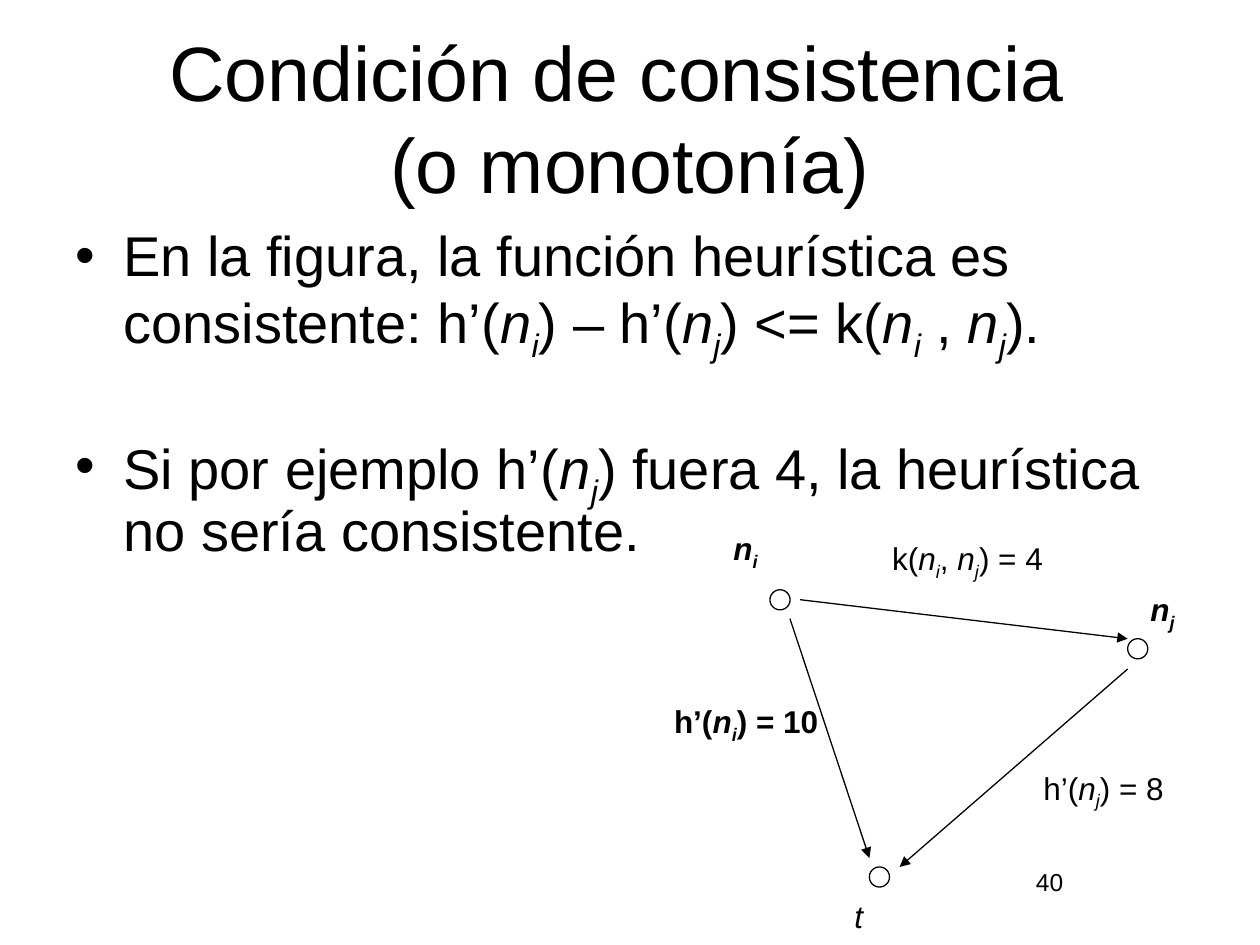
from pptx import Presentation
from pptx.dml.color import RGBColor
from pptx.enum.shapes import MSO_CONNECTOR, MSO_SHAPE
from pptx.enum.text import MSO_ANCHOR, MSO_AUTO_SIZE, PP_ALIGN
from pptx.oxml.ns import qn
from pptx.util import Pt
from lxml.etree import SubElement

BLACK = RGBColor(0, 0, 0)
WHITE = RGBColor(255, 255, 255)
NODE_SIZE = 11.5

NODES = [(58, 35), (262.4, 63), (114.8, 193.4)]
ARROWS = [
    (69.4, 51.5, 114.8, 188.3),
    (262.4, 80.3, 132.1, 193.4),
    (75.2, 40.7, 262.4, 63),
]
LABELS = [
    ("|ni|", 34.2, 0.4, 20.9, 21.6, True),
    ("|nj|", 272.5, 35, 20.9, 21.6, True),
    ("|t|", 103.3, 210.6, 11.5, 21.6, False),
    ("k(|ni|, |nj|) = 4", 124.9, 6.2, 95, 31.7, False),
    ("h’(|ni|) = 10", 0.3, 99, 89.3, 21.6, True),
    ("h’(|nj|) = 8", 211.3, 137.2, 75.6, 21.6, False),
]
BULLETS = [
    ("En la figura, la función heurística es consistente: "
     "h’(|ni|) – h’(|nj|) <= k(|ni| , |nj|).", 4.8),
    ("Si por ejemplo h’(|nj|) fuera 4, la heurística no sería consistente.", 44),
]


def place(sp, x, y, w, h):
    sp.left, sp.top, sp.width, sp.height = Pt(x), Pt(y), Pt(w), Pt(h)


def setup_frame(sp, insets, anchor=MSO_ANCHOR.TOP):
    tf = sp.text_frame
    tf.word_wrap = True
    tf.auto_size = MSO_AUTO_SIZE.NONE
    tf.vertical_anchor = anchor
    tf.margin_left, tf.margin_top, tf.margin_right, tf.margin_bottom = map(Pt, insets)
    return tf


def write(p, text, size, bold=False, align=PP_ALIGN.LEFT, margin=0, indent=0,
          before=0, spacing=1.0):
    p.alignment = align
    p.space_before = Pt(before)
    p.line_spacing = spacing
    pPr = p._p.get_or_add_pPr()
    pPr.set("marL", str(Pt(margin)))
    pPr.set("indent", str(Pt(indent)))

    def add_run(part, italic=False, sub=False):
        r = p.add_run()
        r.text = part
        r.font.name, r.font.size = "Arial", Pt(size)
        r.font.bold, r.font.italic = bold, italic
        r.font.color.rgb = BLACK
        if sub:
            r.font._element.set("baseline", "-25000")

    for i, part in enumerate(text.split("|")):
        if i % 2:
            add_run(part[0], italic=True)
            if part[1:]:
                add_run(part[1:], italic=True, sub=True)
        elif part:
            for j, line in enumerate(part.split("\n")):
                if j:
                    p.add_line_break()
                add_run(line)


def add_title(s, x, y, w, h):
    sp = s.shapes.title
    place(sp, x, y, w, h)
    tf = setup_frame(sp, (4.3, 4.3, 7.2, 4.3), MSO_ANCHOR.MIDDLE)
    write(tf.paragraphs[0], "Condición de consistencia \n(o monotonía)", 44,
          align=PP_ALIGN.CENTER, margin=2.9, indent=-2.9)


def add_body(s, x, y, w, h):
    sp = s.placeholders[1]
    place(sp, x, y, w, h)
    tf = setup_frame(sp, (4.3, 4.3, 7.2, 4.3))
    for i, (text, before) in enumerate(BULLETS):
        p = tf.add_paragraph() if i else tf.paragraphs[0]
        write(p, text, 32, margin=30.2, indent=-27.4, before=before, spacing=0.9)


def add_label(shapes, text, x, y, w, h, insets=(0, 0, 2.9, 0), **fmt):
    sp = shapes.add_textbox(Pt(x), Pt(y), Pt(w), Pt(h))
    write(setup_frame(sp, insets).paragraphs[0], text, **fmt)


def add_node(shapes, x, y):
    sp = shapes.add_shape(MSO_SHAPE.OVAL, Pt(x), Pt(y), Pt(NODE_SIZE), Pt(NODE_SIZE))
    sp.shadow.inherit = False
    sp.fill.solid()
    sp.fill.fore_color.rgb = WHITE
    sp.line.color.rgb = BLACK
    sp.line.width = Pt(0.75)


def add_arrow(shapes, x1, y1, x2, y2):
    cxn = shapes.add_connector(MSO_CONNECTOR.STRAIGHT, Pt(x1), Pt(y1), Pt(x2), Pt(y2))
    cxn.line.color.rgb = BLACK
    cxn.line.width = Pt(0.75)
    SubElement(cxn.line._get_or_add_ln(), qn("a:tailEnd"), type="triangle")
    SubElement(cxn._element.spPr, qn("a:effectLst"))


def add_graph(s, x, y):
    shapes = s.shapes.add_group_shape().shapes
    for nx, ny in NODES:
        add_node(shapes, x + nx, y + ny)
    for x1, y1, x2, y2 in ARROWS:
        add_arrow(shapes, x + x1, y + y1, x + x2, y + y2)
    for text, lx, ly, w, h, bold in LABELS:
        add_label(shapes, text, x + lx, y + ly, w, h, size=18, bold=bold, margin=2.9)


def main():
    prs = Presentation()
    prs.slide_width, prs.slide_height = Pt(720), Pt(540)
    s = prs.slides.add_slide(prs.slide_layouts[1])
    add_title(s, 36, 7.2, 648, 118.8)
    add_body(s, 36, 126, 648, 414)
    add_label(s.shapes, "40", 587.5, 491.8, 24.5, 23.8, insets=(0, 3.6, 0, 3.6),
              size=14, align=PP_ALIGN.CENTER)
    add_graph(s, 382, 302)
    prs.save("out.pptx")


if __name__ == "__main__":
    main()
